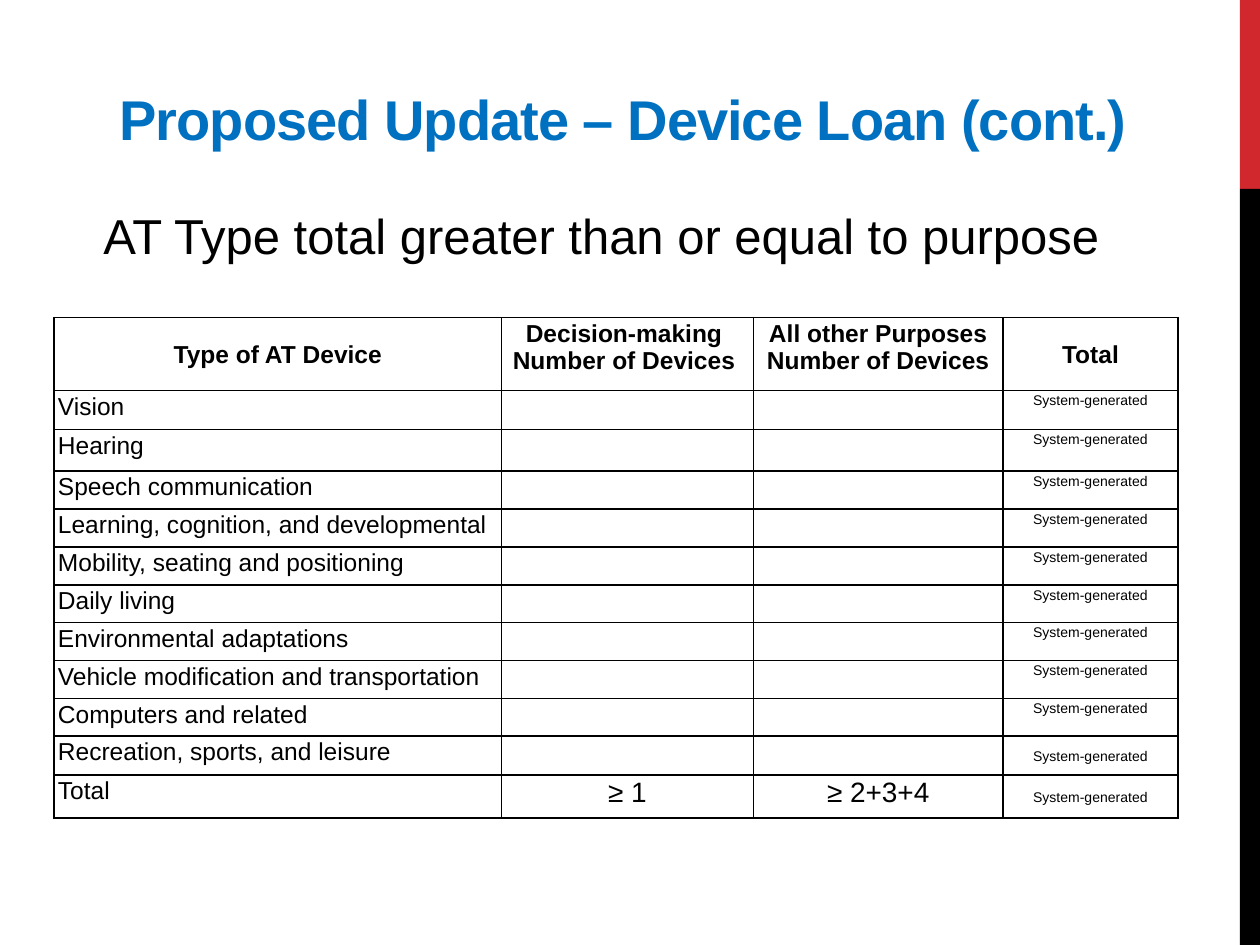
import dataclasses

import lxml.etree
import pptx
import pptx.dml.color
import pptx.enum.shapes
import pptx.enum.text
import pptx.oxml.ns
import pptx.slide
import pptx.table
import pptx.text.text
import pptx.util

Inches = pptx.util.Inches
Pt = pptx.util.Pt
ALIGN = pptx.enum.text.PP_ALIGN
ANCHOR = pptx.enum.text.MSO_ANCHOR
BLACK = "000000"


@dataclasses.dataclass
class Box:
    left: float
    top: float
    width: float
    height: float


@dataclasses.dataclass
class Style:
    size: float
    color: str = BLACK
    bold: bool = False
    align: ALIGN = ALIGN.CENTER
    anchor: ANCHOR = ANCHOR.TOP


BARS = [(Box(9.84, 0, 0.16, 1.5), "D1282E"), (Box(9.84, 1.5, 0.16, 6), BLACK)]
COLS = [3.55, 2, 1.98, 1.39]
ROWS = [0.58, 0.31, 0.33] + [0.29] * 7 + [0.31, 0.34]
HEADS = [
    "Type of AT Device",
    "Decision-making \nNumber of Devices ",
    "All other Purposes\nNumber of Devices",
    "Total",
]
KINDS = [
    "Vision",
    "Hearing",
    "Speech communication",
    "Learning, cognition, and developmental",
    "Mobility, seating and positioning",
    "Daily living",
    "Environmental adaptations",
    "Vehicle modification and transportation",
    "Computers and related",
    "Recreation, sports, and leisure",
]
AUTO = "System-generated"
GRID = [HEADS] + [[kind, "", "", AUTO] for kind in KINDS]
GRID.append(["Total", "≥ 1", "≥ 2+3+4", AUTO])


def rgb(code: str) -> pptx.dml.color.RGBColor:
    return pptx.dml.color.RGBColor.from_string(code)


def span(box: Box) -> list[int]:
    return [Inches(n) for n in (box.left, box.top, box.width, box.height)]


def write(frame: pptx.text.text.TextFrame, text: str, style: Style) -> None:
    frame.text = text
    frame.word_wrap = True
    frame.vertical_anchor = style.anchor
    for para in frame.paragraphs:
        para.alignment = style.align
        for run in para.runs:
            run.font.name = "Arial"
            run.font.size = Pt(style.size)
            run.font.bold = style.bold
            run.font.color.rgb = rgb(style.color)


def label(slide: pptx.slide.Slide, box: Box, text: str, style: Style) -> pptx.text.text.TextFrame:
    frame = slide.shapes.add_textbox(*span(box)).text_frame
    write(frame, text, style)
    frame.paragraphs[0].space_after = Pt(12)
    return frame


def bar(slide: pptx.slide.Slide, box: Box, color: str) -> None:
    shape = slide.shapes.add_shape(pptx.enum.shapes.MSO_SHAPE.RECTANGLE, *span(box))
    shape.shadow.inherit = False
    shape.fill.solid()
    shape.fill.fore_color.rgb = rgb(color)
    shape.line.fill.background()


def border(cell: pptx.table._Cell) -> None:
    props = cell._tc.get_or_add_tcPr()
    qn = pptx.oxml.ns.qn
    for spot, side in enumerate(("a:lnL", "a:lnR", "a:lnT", "a:lnB")):
        line = lxml.etree.Element(qn(side), w=str(Pt(1)))
        fill = lxml.etree.SubElement(line, qn("a:solidFill"))
        lxml.etree.SubElement(fill, qn("a:srgbClr"), val=BLACK)
        props.insert(spot, line)


def look(row: int, col: int) -> Style:
    last = col == len(COLS) - 1
    if row == 0:
        return Style(14, bold=True, anchor=ANCHOR.MIDDLE if col == 0 or last else ANCHOR.TOP)
    if col == 0:
        return Style(14, align=ALIGN.LEFT)
    if last:
        return Style(8, anchor=ANCHOR.MIDDLE if row >= len(KINDS) else ANCHOR.TOP)
    return Style(16)


def grid(slide: pptx.slide.Slide) -> None:
    box = Box(0.43, 2.52, sum(COLS), sum(ROWS))
    table = slide.shapes.add_table(len(ROWS), len(COLS), *span(box)).table
    table.first_row = table.horz_banding = False
    for col, width in zip(table.columns, COLS):
        col.width = Inches(width)
    for row, height in zip(table.rows, ROWS):
        row.height = Inches(height)
    for r, texts in enumerate(GRID):
        for c, text in enumerate(texts):
            cell = table.cell(r, c)
            style = look(r, c)
            write(cell.text_frame, text, style)
            cell.vertical_anchor = style.anchor
            cell.margin_left = cell.margin_right = Inches(0.04 if c else 0.03)
            cell.margin_top = Inches(0.02 if text else 0)
            cell.margin_bottom = Inches(0.01 if text else 0)
            cell.fill.background()
            border(cell)


def main() -> None:
    """Build the device loan slide and save it."""
    deck = pptx.Presentation()
    deck.slide_width, deck.slide_height = Inches(10), Inches(7.5)
    slide = deck.slides.add_slide(deck.slide_layouts[6])
    for box, color in BARS:
        bar(slide, box, color)
    title = label(
        slide,
        Box(0.5, 0.33, 9, 0.92),
        "Proposed Update – Device Loan (cont.) ",
        Style(32, "0070C0", True, anchor=ANCHOR.BOTTOM),
    )
    title.paragraphs[0].runs[0].font._element.set("spc", "-60")
    body = label(
        slide,
        Box(0.42, 1.58, 9.08, 0.6),
        "AT Type total greater than or equal to purpose",
        Style(28, align=ALIGN.LEFT),
    )
    body.margin_left = Inches(0.4)
    body.paragraphs[0].space_before = Pt(3)
    grid(slide)
    deck.save("out.pptx")


if __name__ == "__main__":
    main()
